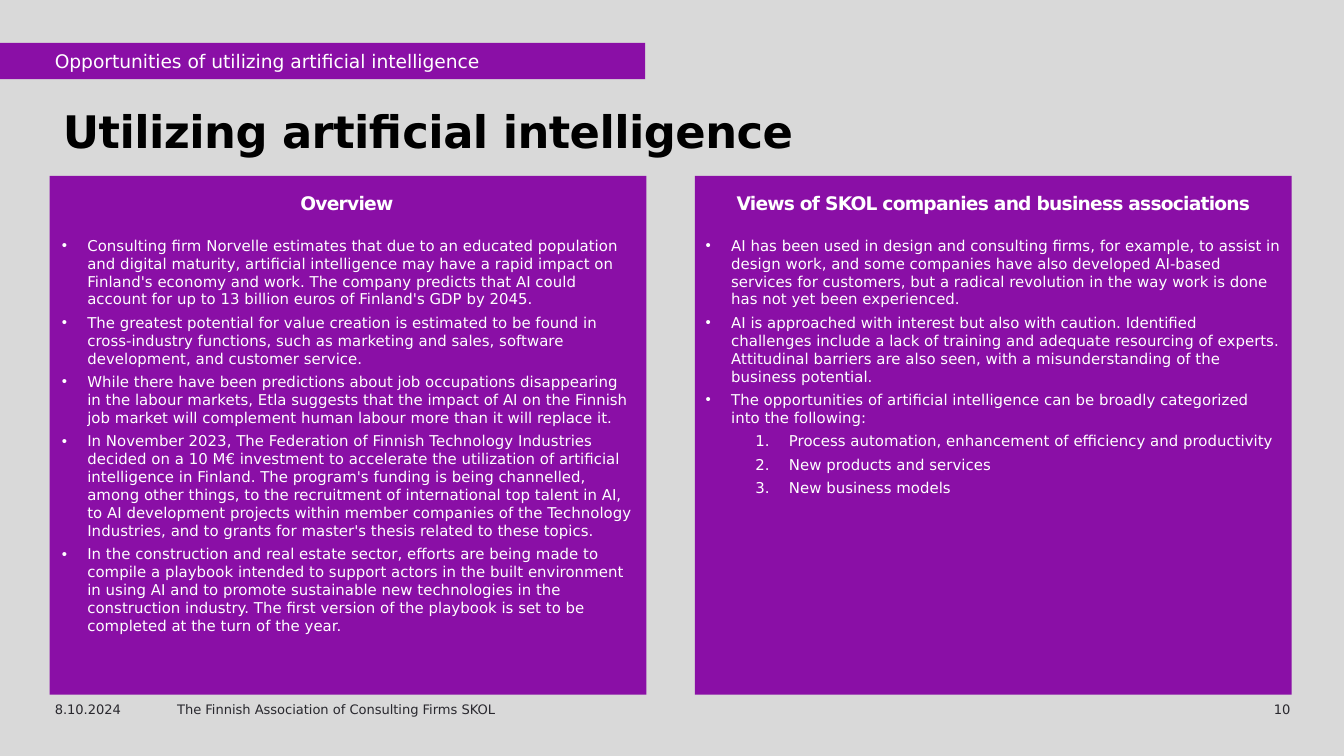
import dataclasses

import lxml.etree
import pptx
import pptx.dml.color
import pptx.enum.shapes
import pptx.enum.text
import pptx.oxml.ns
import pptx.util

Inches = pptx.util.Inches
Align = pptx.enum.text.PP_ALIGN
Anchor = pptx.enum.text.MSO_ANCHOR


@dataclasses.dataclass(frozen=True)
class Theme:
    font: str = "DejaVu Sans"
    background: str = "D9D9D9"
    panel: str = "8A0FA6"
    on_panel: str = "FFFFFF"
    title: str = "000000"
    footer: str = "29282E"
    title_size: int = 24
    heading_size: int = 10
    body_size: int = 8
    footer_size: int = 7


def rgb(value):
    return pptx.dml.color.RGBColor.from_string(value)


def write_text(paragraph, text, *, font, size, color, bold=False, align=Align.LEFT,
               tracking=0, line=None, after=0):
    paragraph.alignment = align
    paragraph.space_after = pptx.util.Pt(after)
    if line:
        paragraph.line_spacing = pptx.util.Pt(line)
    run = paragraph.add_run()
    run.text = text
    run.font.name = font
    run.font.size = pptx.util.Pt(size)
    run.font.bold = bold
    run.font.color.rgb = rgb(color)
    if tracking:
        run._r.get_or_add_rPr().set("spc", str(round(tracking * 100)))


class SlideBuilder:
    def __init__(self, slide, theme):
        self.slide = slide
        self.theme = theme
        slide.background.fill.solid()
        slide.background.fill.fore_color.rgb = rgb(theme.background)

    def panel(self, left, top, width, height):
        panel = self.slide.shapes.add_shape(
            pptx.enum.shapes.MSO_SHAPE.RECTANGLE,
            Inches(left), Inches(top), Inches(width), Inches(height))
        panel.shadow.inherit = False
        panel.fill.solid()
        panel.fill.fore_color.rgb = rgb(self.theme.panel)
        panel.line.fill.background()
        return panel

    def frame(self, left, top, width, height, side=0.1):
        frame = self.slide.shapes.add_textbox(
            Inches(left), Inches(top), Inches(width), Inches(height)).text_frame
        frame.word_wrap = True
        frame.margin_left = frame.margin_right = Inches(side)
        return frame

    def banner(self, text, left, top, width, height):
        frame = self.panel(left, top, width, height).text_frame
        frame.vertical_anchor = Anchor.TOP
        self.indent(frame.paragraphs[0], 0.31, 0)
        write_text(frame.paragraphs[0], text, font=self.theme.font,
                   size=self.theme.heading_size, color=self.theme.on_panel)

    def title(self, text, left, top, width, height):
        write_text(self.frame(left, top, width, height).paragraphs[0], text,
                   font=self.theme.font, size=self.theme.title_size,
                   color=self.theme.title, bold=True, tracking=-0.3, line=27)

    def heading(self, text, left, top, width, height):
        frame = self.frame(left, top, width, height, side=0.04)
        frame.vertical_anchor = Anchor.MIDDLE
        write_text(frame.paragraphs[0], text, font=self.theme.font,
                   size=self.theme.heading_size, color=self.theme.on_panel,
                   bold=True, align=Align.CENTER, tracking=-0.4)

    def footer(self, text, left, width, align=Align.LEFT):
        write_text(self.frame(left, 5.17, width, 0.18).paragraphs[0], text,
                   font=self.theme.font, size=self.theme.footer_size,
                   color=self.theme.footer, align=align)

    def indent(self, paragraph, margin, hanging):
        properties = paragraph._p.get_or_add_pPr()
        properties.set("marL", str(Inches(margin)))
        properties.set("indent", str(Inches(-hanging)))
        return properties

    def points(self, bullets, numbered, left, top, width, height):
        frame = self.frame(left, top, width, height, side=0.08)
        frame.auto_size = pptx.enum.text.MSO_AUTO_SIZE.SHAPE_TO_FIT_TEXT
        qn = pptx.oxml.ns.qn
        for index, text in enumerate(bullets + numbered):
            paragraph = frame.add_paragraph() if index else frame.paragraphs[0]
            if index < len(bullets):
                properties = self.indent(paragraph, 0.19, 0.19)
                lxml.etree.SubElement(properties, qn("a:buFont"), typeface="Arial")
                lxml.etree.SubElement(properties, qn("a:buChar"), char="•")
            else:
                paragraph.level = 1
                properties = self.indent(paragraph, 0.62, 0.25)
                lxml.etree.SubElement(properties, qn("a:buFont"), typeface=self.theme.font)
                lxml.etree.SubElement(properties, qn("a:buAutoNum"), type="arabicPeriod")
            write_text(paragraph, text, font=self.theme.font, size=self.theme.body_size,
                       color=self.theme.on_panel, after=3)


OVERVIEW = [
    "Consulting firm Norvelle estimates that due to an educated population and digital maturity, artificial intelligence may have a rapid impact on Finland's economy and work. The company predicts that AI could account for up to 13 billion euros of Finland's GDP by 2045.",
    "The greatest potential for value creation is estimated to be found in cross-industry functions, such as marketing and sales, software development, and customer service.",
    "While there have been predictions about job occupations disappearing in the labour markets, Etla suggests that the impact of AI on the Finnish job market will complement human labour more than it will replace it.",
    "In November 2023, The Federation of Finnish Technology Industries decided on a 10 M€ investment to accelerate the utilization of artificial intelligence in Finland. The program's funding is being channelled, among other things, to the recruitment of international top talent in AI, to AI development projects within member companies of the Technology Industries, and to grants for master's thesis related to these topics.",
    "In the construction and real estate sector, efforts are being made to compile a playbook intended to support actors in the built environment in using AI and to promote sustainable new technologies in the construction industry. The first version of the playbook is set to be completed at the turn of the year.",
]
VIEWS = [
    "AI has been used in design and consulting firms, for example, to assist in design work, and some companies have also developed AI-based services for customers, but a radical revolution in the way work is done has not yet been experienced.",
    "AI is approached with interest but also with caution. Identified challenges include a lack of training and adequate resourcing of experts. Attitudinal barriers are also seen, with a misunderstanding of the business potential.",
    "The opportunities of artificial intelligence can be broadly categorized into the following:",
]
OPPORTUNITIES = [
    "Process automation, enhancement of efficiency and productivity",
    "New products and services",
    "New business models",
]
COLUMNS = [
    (0.37, "Overview", 4.42, OVERVIEW, [], 0.38, 4.41, 3.37),
    (5.17, "Views of SKOL companies and business associations", 4.44,
     VIEWS, OPPORTUNITIES, 5.17, 4.45, 2.06),
]


def main():
    deck = pptx.Presentation()
    deck.slide_width = Inches(10)
    deck.slide_height = deck.slide_width * 9 // 16
    builder = SlideBuilder(deck.slides.add_slide(deck.slide_layouts[6]), Theme())

    for left, *_ in COLUMNS:
        builder.panel(left, 1.31, 4.44, 3.86)
    builder.title("Utilizing artificial intelligence", 0.37, 0.75, 9.29, 0.4)
    builder.banner("Opportunities of utilizing artificial intelligence", 0, 0.32, 4.8, 0.27)
    for left, heading, heading_width, bullets, numbered, inset_left, width, height in COLUMNS:
        builder.heading(heading, left, 1.31, heading_width, 0.4)
        builder.points(bullets, numbered, inset_left, 1.71, width, height)

    builder.footer("8.10.2024", 0.31, 1)
    builder.footer("The Finnish Association of Consulting Firms SKOL", 1.22, 3.6)
    builder.footer("10", 8.76, 0.94, align=Align.RIGHT)
    deck.save("out.pptx")


if __name__ == "__main__":
    main()
